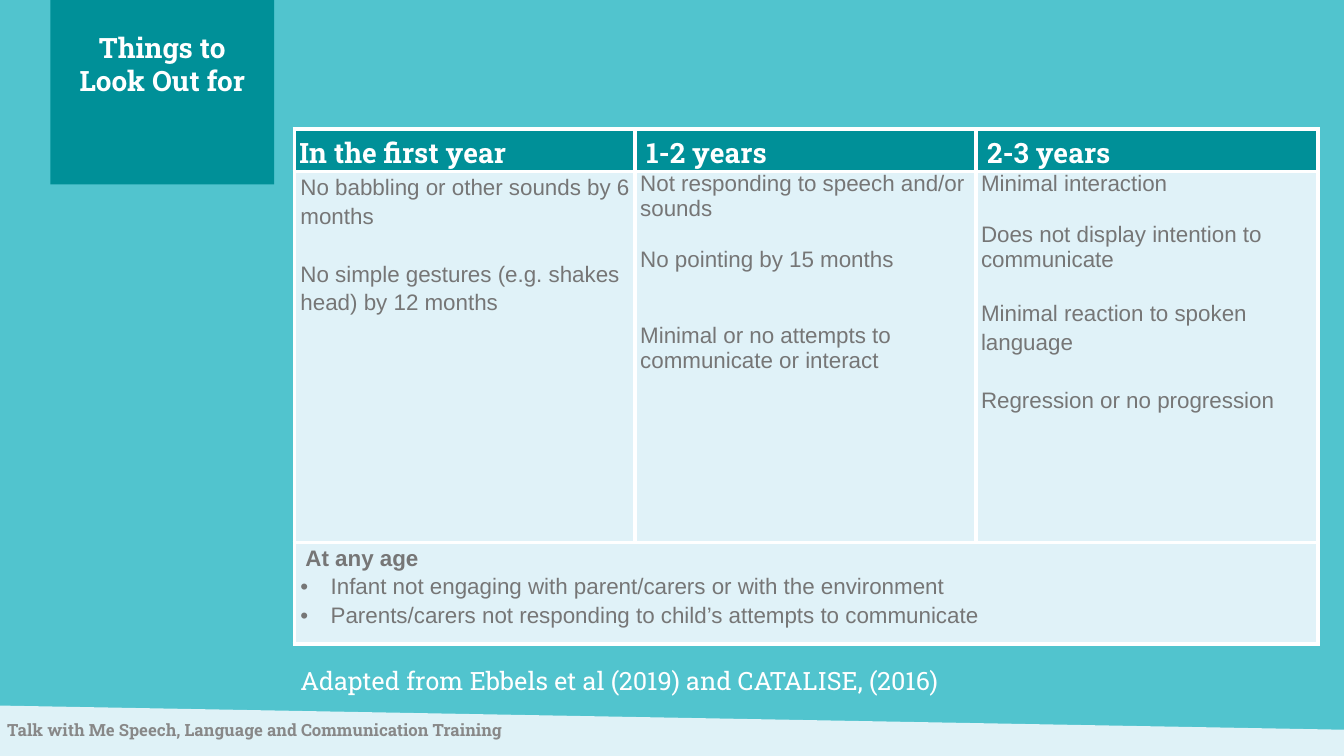
import pptx
import pptx.util
import pptx.dml.color
import pptx.enum.shapes
import pptx.enum.text
import pptx.oxml
import pptx.oxml.ns

Inches, Pt = pptx.util.Inches, pptx.util.Pt
RGBColor = pptx.dml.color.RGBColor

# Content: each sign is (text, space before in points, line spacing)
TITLE = "Things to\nLook Out for"
AGES = ["In the first year", "1-2 years", "2-3 years"]
SIGNS = [
    [("No babbling or other sounds by 6 months", 0, 1.15),
     ("No simple gestures (e.g. shakes head) by 12 months", 21, 1.15)],
    [("Not responding to speech and/or sounds", 0, 1),
     ("No pointing by 15 months", 18.4, 1),
     ("Minimal or no attempts to communicate or interact", 36.8, 1)],
    [("Minimal interaction", 0, 1),
     ("Does not display intention to communicate", 18.4, 1),
     ("Minimal reaction to spoken language", 18.4, 1.15),
     ("Regression or no progression", 21, 1.15)],
]
ANY_AGE = "At any age"
ANY_AGE_SIGNS = [
    "Infant not engaging with parent/carers or with the environment",
    "Parents/carers not responding to child’s attempts to communicate",
]
SOURCE = "Adapted from Ebbels et al (2019) and CATALISE, (2016)"
FOOTER = "Talk with Me Speech, Language and Communication Training"

# Look
SLAB, SANS = "Roboto Slab", "Arial"
AQUA = RGBColor(0x51, 0xC4, 0xCE)
TEAL = RGBColor(0x00, 0x90, 0x98)
PALE = RGBColor(0xE0, 0xF2, 0xF8)
WAVE = RGBColor(0xDF, 0xF2, 0xF7)
WHITE = RGBColor(0xFF, 0xFF, 0xFF)
GREY = RGBColor(0x76, 0x76, 0x76)
FOOTER_GREY = RGBColor(0x88, 0x88, 0x88)
SLIDE_W, SLIDE_H = 13.33, 7.5
COLUMN_WIDTHS = [3.38, 3.38, 3.39]
ROW_HEIGHTS = [0.35, 3.68, 1.01]
SPACE_WIDTH = 0.06


def style(paragraph, font, size, color, bold=False):
    for run in paragraph.runs:
        run.font.name = font
        run.font.size = Pt(size)
        run.font.color.rgb = color
        run.font.bold = bold


def indent(paragraph, left, first=0, bullet=False):
    props = paragraph._p.get_or_add_pPr()
    props.set("marL", str(Inches(left)))
    props.set("indent", str(Inches(first)))
    if bullet:
        ns = pptx.oxml.ns.nsdecls("a")
        props.append(pptx.oxml.parse_xml(f'<a:buFont {ns} typeface="{SANS}"/>'))
        props.append(pptx.oxml.parse_xml(f'<a:buChar {ns} char="•"/>'))


def plain(shape, color):
    shape.shadow.inherit = False
    shape.fill.solid()
    shape.fill.fore_color.rgb = color
    shape.line.fill.background()


def set_margins(frame, x, y):
    frame.margin_left = frame.margin_right = Inches(x)
    frame.margin_top = frame.margin_bottom = Inches(y)


def add_label(slide, text, box, margins, size, color, bold):
    frame = slide.shapes.add_textbox(*map(Inches, box)).text_frame
    frame.word_wrap = True
    set_margins(frame, *margins)
    frame.text = text
    style(frame.paragraphs[0], SLAB, size, color, bold)


def format_cell(cell, color):
    set_margins(cell, 0.05, 0)
    props = cell._tc.get_or_add_tcPr()
    for side in ("lnL", "lnR", "lnT", "lnB"):
        props.append(pptx.oxml.parse_xml(
            f'<a:{side} {pptx.oxml.ns.nsdecls("a")} w="{Pt(3)}"><a:solidFill>'
            f'<a:srgbClr val="{WHITE}"/></a:solidFill></a:{side}>'))
    cell.fill.solid()
    cell.fill.fore_color.rgb = color


def main():
    deck = pptx.Presentation()
    deck.slide_width, deck.slide_height = Inches(SLIDE_W), Inches(SLIDE_H)
    slide = deck.slides.add_slide(deck.slide_layouts[5])
    slide.background.fill.solid()
    slide.background.fill.fore_color.rgb = AQUA

    # Sloping footer band
    outline = [(0, 7), (0, SLIDE_H), (SLIDE_W, SLIDE_H), (SLIDE_W, 7.24)]
    corners = [(Inches(x), Inches(y)) for x, y in outline]
    builder = slide.shapes.build_freeform(*corners[0])
    builder.add_line_segments(corners[1:], close=True)
    plain(builder.convert_to_shape(), WAVE)

    # Table grid
    signs_table = slide.shapes.add_table(
        3, 3, Inches(2.92), Inches(1.28),
        Inches(sum(COLUMN_WIDTHS)), Inches(sum(ROW_HEIGHTS))).table
    signs_table.first_row = signs_table.horz_banding = False
    for column, width in zip(signs_table.columns, COLUMN_WIDTHS):
        column.width = Inches(width)
    for row_index, height in enumerate(ROW_HEIGHTS):
        signs_table.rows[row_index].height = Inches(height)
        for cell in signs_table.rows[row_index].cells:
            format_cell(cell, TEAL if row_index == 0 else PALE)

    # Ages and their signs
    for index, (age, signs) in enumerate(zip(AGES, SIGNS)):
        header = signs_table.cell(0, index).text_frame
        header.text = age
        heading = header.paragraphs[0]
        heading.line_spacing = 1.15
        indent(heading, SPACE_WIDTH if index else 0)
        style(heading, SLAB, 20, WHITE, True)

        body = signs_table.cell(1, index).text_frame
        body.text = "\n".join(text for text, _, _ in signs)
        for sign, (_, gap, spacing) in zip(body.paragraphs, signs):
            sign.line_spacing = spacing
            if gap:
                sign.space_before = Pt(gap)
            indent(sign, 0 if index else 0.01)
            style(sign, SANS, 16, GREY)

    # Signs at any age
    any_age_cell = signs_table.cell(2, 0)
    any_age_cell.merge(signs_table.cell(2, 2))
    any_age_cell.text_frame.text = "\n".join([ANY_AGE] + ANY_AGE_SIGNS)
    for index, line in enumerate(any_age_cell.text_frame.paragraphs):
        line.line_spacing = 1.15
        if index:
            indent(line, 0.31, -0.3, bullet=True)
        else:
            indent(line, SPACE_WIDTH)
        style(line, SANS, 16, GREY, index == 0)

    add_label(slide, SOURCE, (2.88, 6.55, 7.21, 0.4), (0.1, 0.05), 18, WHITE, False)

    # Title on its tab
    tab = slide.shapes.add_shape(
        pptx.enum.shapes.MSO_SHAPE.RECTANGLE,
        Inches(0.5), 0, Inches(2.22), Inches(1.83))
    plain(tab, TEAL)
    title = slide.shapes.title
    title.left, title.top = Inches(0.5), Inches(0.3)
    title.width, title.height = Inches(2.22), Inches(1.53)
    tab._element.addnext(title._element)
    frame = title.text_frame
    frame.text = TITLE
    frame.word_wrap = True
    frame.auto_size = pptx.enum.text.MSO_AUTO_SIZE.NONE
    frame.vertical_anchor = pptx.enum.text.MSO_ANCHOR.TOP
    set_margins(frame, 0, 0)
    for line in frame.paragraphs:
        line.alignment = pptx.enum.text.PP_ALIGN.CENTER
        style(line, SLAB, 20, WHITE, True)

    add_label(slide, FOOTER, (0.07, 7.14, 8.55, 0.2), (0, 0), 12, FOOTER_GREY, True)

    deck.save("out.pptx")


if __name__ == "__main__":
    main()
